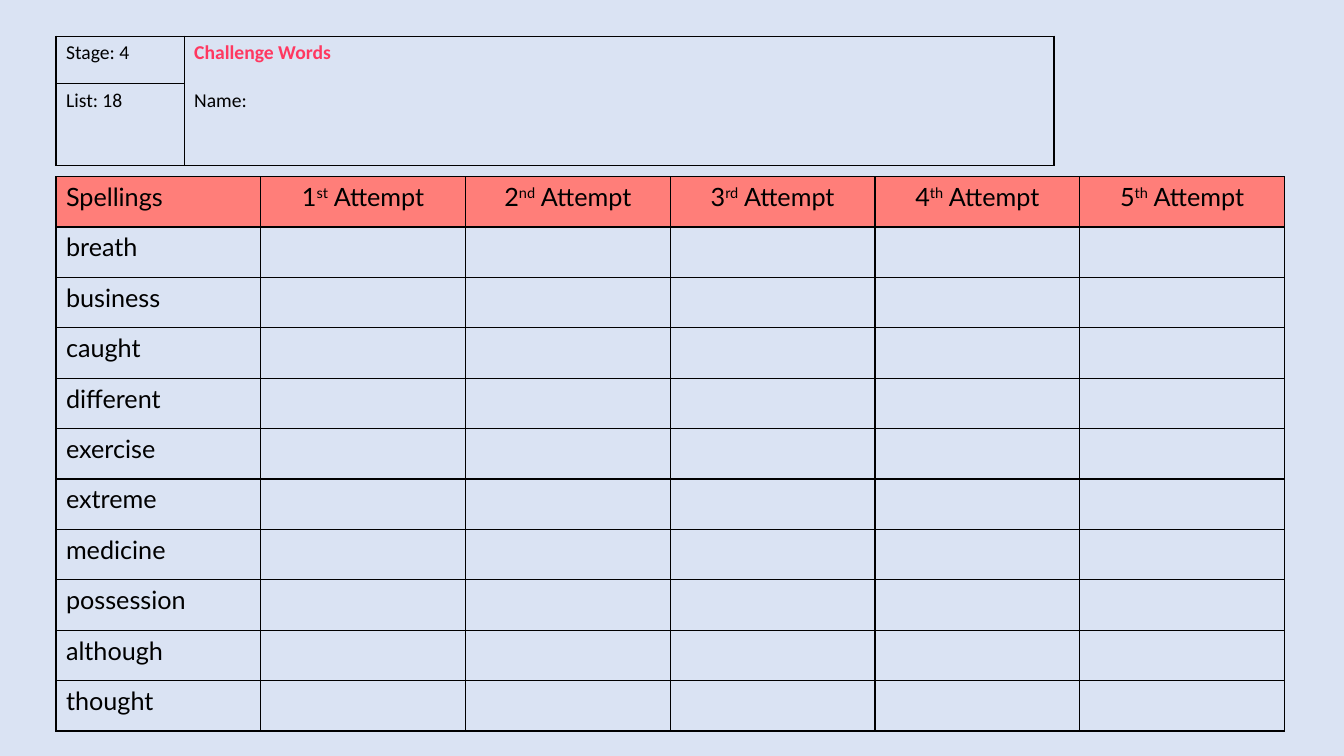
import pptx
import pptx.dml.color
import pptx.enum.text
import pptx.oxml
import pptx.oxml.ns
import pptx.util
from pptx.util import Cm, Pt

BLACK = pptx.dml.color.RGBColor(0x00, 0x00, 0x00)
PINK = pptx.dml.color.RGBColor(0xFF, 0x38, 0x60)
CORAL = pptx.dml.color.RGBColor(0xFF, 0x7E, 0x79)
PALE_BLUE = pptx.dml.color.RGBColor(0xDA, 0xE3, 0xF3)
TABLE_GRID_STYLE = "{5940675A-B579-460E-94D1-54222C63F5DA}"

WORDS = ["breath", "business", "caught", "different", "exercise",
         "extreme", "medicine", "possession", "although", "thought"]
ORDINALS = ["st", "nd", "rd", "th", "th"]


def add_grid(slide, left, top, widths, row_height, row_count):
    frame = slide.shapes.add_table(row_count, len(widths), Cm(left), Cm(top),
                                   Cm(sum(widths)), Cm(row_height * row_count))
    grid = frame.table
    grid.first_row = False
    grid.horz_banding = False
    style = grid._tbl.tblPr.find(pptx.oxml.ns.qn("a:tableStyleId"))
    style.text = TABLE_GRID_STYLE
    for column, width in zip(grid.columns, widths):
        column.width = Cm(width)
    for row in grid.rows:
        row.height = Cm(row_height)
    for cell in grid.iter_cells():
        properties = cell._tc.get_or_add_tcPr()
        for side in ("lnL", "lnR", "lnT", "lnB"):
            properties.append(pptx.oxml.parse_xml(
                f'<a:{side} {pptx.oxml.ns.nsdecls("a")} w="12700"><a:solidFill>'
                f'<a:srgbClr val="{BLACK}"/></a:solidFill></a:{side}>'))
        cell.fill.background()
    return grid


def add_text(paragraph, text, font, size, color=BLACK, bold=False):
    run = paragraph.add_run()
    run.text = text
    run.font.name = font
    run.font.size = Pt(size)
    run.font.color.rgb = color
    run.font.bold = bold
    return run


deck = pptx.Presentation()
deck.slide_width = Cm(33.87)
deck.slide_height = Cm(19.05)
slide = deck.slides.add_slide(deck.slide_layouts[6])
slide.background.fill.solid()
slide.background.fill.fore_color.rgb = PALE_BLUE

spellings = add_grid(slide, 1.41, 4.45, [5.16] * 6, 1.27, len(WORDS) + 1)
for heading in spellings.rows[0].cells:
    heading.fill.solid()
    heading.fill.fore_color.rgb = CORAL
for row, word in enumerate(["Spellings"] + WORDS):
    add_text(spellings.cell(row, 0).text_frame.paragraphs[0], word, "Lato", 18)
for attempt, ordinal in enumerate(ORDINALS, 1):
    heading = spellings.cell(0, attempt).text_frame.paragraphs[0]
    heading.alignment = pptx.enum.text.PP_ALIGN.CENTER
    add_text(heading, str(attempt), "Lato", 18)
    suffix = add_text(heading, ordinal, "Lato", 18)
    suffix.font._element.set("baseline", "30000")
    add_text(heading, " Attempt", "Lato", 18)

details = add_grid(slide, 1.41, 0.91, [3.23, 21.92], 1.2, 2)
details.cell(0, 1).merge(details.cell(1, 1))
for row, label in enumerate(["Stage: 4", "List: 18"]):
    add_text(details.cell(row, 0).text_frame.paragraphs[0], label, "Calibri", 14)
challenge = details.cell(0, 1).text_frame
add_text(challenge.paragraphs[0], "Challenge Words", "Calibri", 14, PINK, True)
pupil_name = challenge.add_paragraph()
pupil_name.space_before = Pt(17)
add_text(pupil_name, "Name:", "Calibri", 14)

deck.save("out.pptx")
